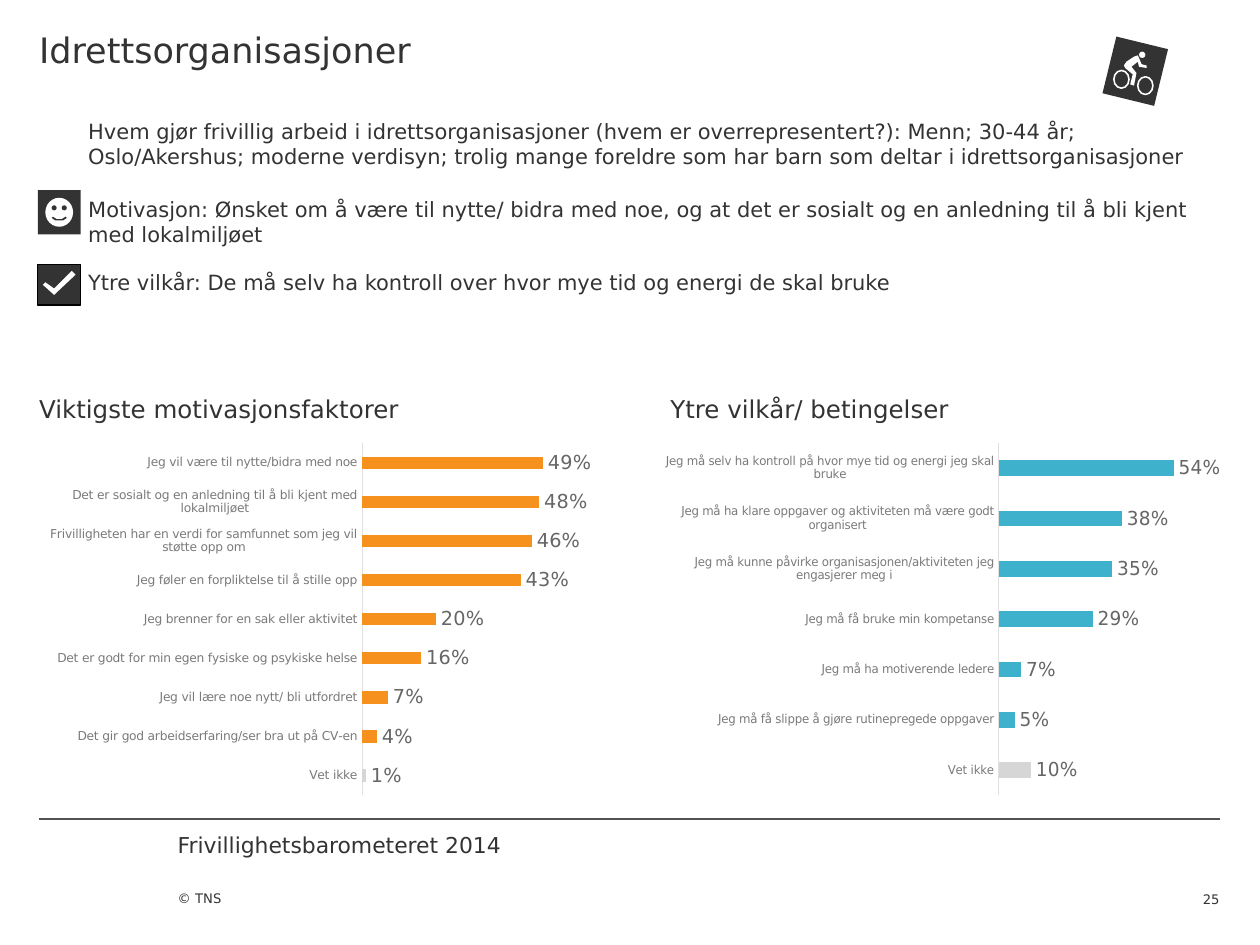
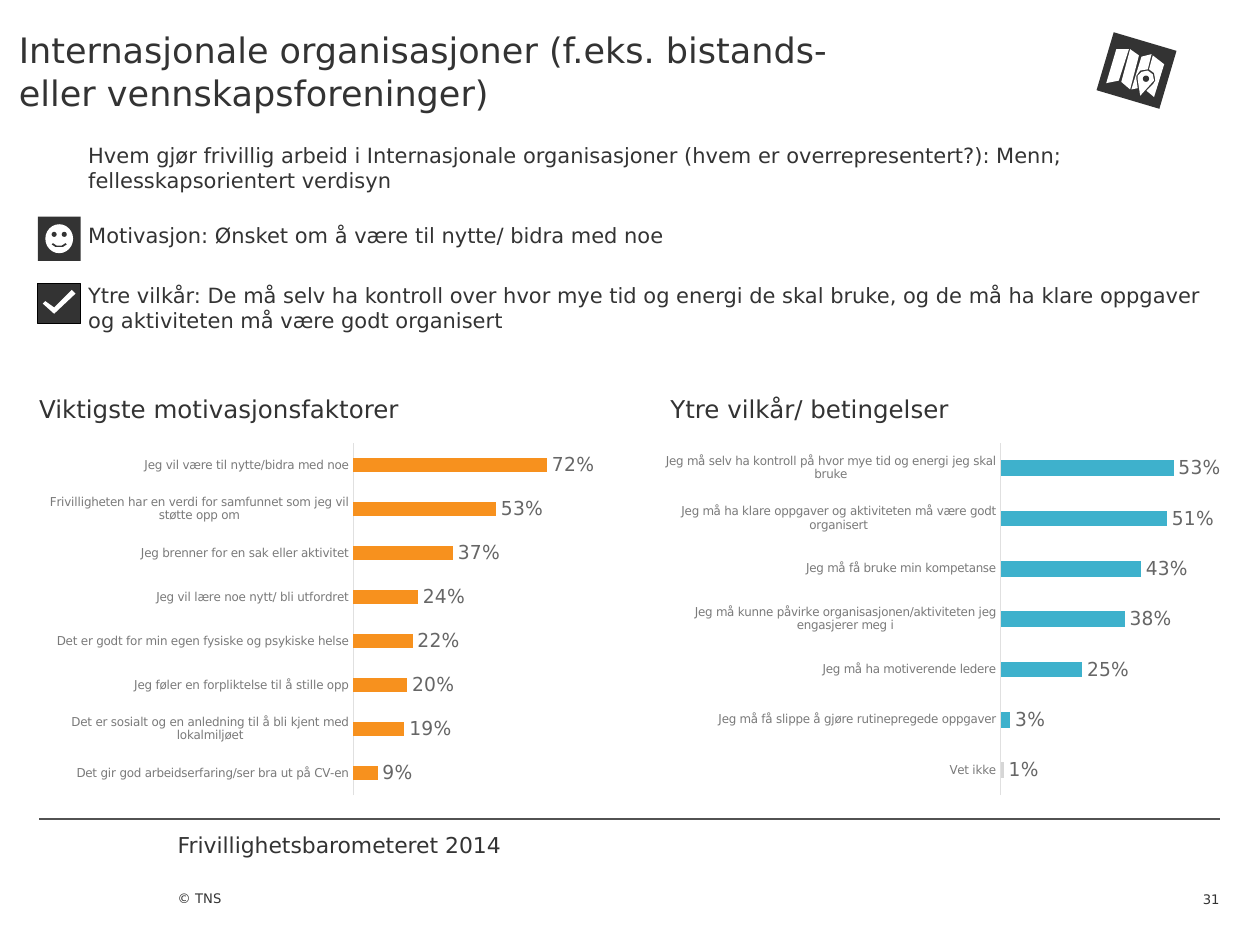
from lxml import etree
from pptx import Presentation
from pptx.chart.data import CategoryChartData
from pptx.dml.color import RGBColor
from pptx.enum.chart import XL_CHART_TYPE, XL_LABEL_POSITION, XL_TICK_MARK
from pptx.enum.shapes import MSO_CONNECTOR, MSO_SHAPE
from pptx.enum.text import MSO_ANCHOR, MSO_AUTO_SIZE, PP_ALIGN
from pptx.oxml.ns import qn
from pptx.util import Inches, Pt

BAR_CLUSTERED = XL_CHART_TYPE.BAR_CLUSTERED
OUTSIDE_END = XL_LABEL_POSITION.OUTSIDE_END
NO_TICK = XL_TICK_MARK.NONE
STRAIGHT = MSO_CONNECTOR.STRAIGHT
RECTANGLE, OVAL = MSO_SHAPE.RECTANGLE, MSO_SHAPE.OVAL
TOP, BOTTOM = MSO_ANCHOR.TOP, MSO_ANCHOR.BOTTOM
LEFT, RIGHT = PP_ALIGN.LEFT, PP_ALIGN.RIGHT
NO_AUTOFIT = MSO_AUTO_SIZE.NONE

FONT = "DejaVu Sans"
DARK, WHITE, BLACK = "333333", "FFFFFF", "000000"
RULE, AXIS = "525252", "E0E0E0"
CATEGORY_TEXT, VALUE_TEXT = "7A7A7A", "666666"
ORANGE, TURQUOISE, GREY = "F7911E", "3EB1CC", "D6D6D6"

DONT_KNOW = "Vet ikke"
USEFUL = "Jeg vil være til nytte/bidra med noe"
SOCIAL = "Det er sosialt og en anledning til å bli kjent med lokalmiljøet"
SOCIETY = "Frivilligheten har en verdi for samfunnet som jeg vil støtte opp om"
OBLIGATION = "Jeg føler en forpliktelse til å stille opp"
PASSION = "Jeg brenner for en sak eller aktivitet"
HEALTH = "Det er godt for min egen fysiske og psykiske helse"
LEARNING = "Jeg vil lære noe nytt/ bli utfordret"
CAREER = "Det gir god arbeidserfaring/ser bra ut på CV-en"
CONTROL = "Jeg må selv ha kontroll på hvor mye tid og energi jeg skal bruke"
CLEAR_TASKS = "Jeg må ha klare oppgaver og aktiviteten må være godt organisert"
INFLUENCE = "Jeg må kunne påvirke organisasjonen/aktiviteten jeg engasjerer meg i"
COMPETENCE = "Jeg må få bruke min kompetanse"
LEADERS = "Jeg må ha motiverende ledere"
NO_ROUTINE = "Jeg må få slippe å gjøre rutinepregede oppgaver"


def color(hex_string):
    return RGBColor.from_string(hex_string)


class Deck:
    def __init__(self):
        self.presentation = Presentation()
        self.presentation.slide_width = Inches(10)
        self.presentation.slide_height = Inches(7.5)
        self.slide = None

    def add_slide(self, title_lines, title_left, number):
        """Start a slide with its title, footer rule and footer texts."""
        layout = self.presentation.slide_layouts[5]
        self.slide = self.presentation.slides.add_slide(layout)
        title = self.slide.shapes.title
        title.left, title.top = Inches(title_left), Inches(0)
        title.width, title.height = Inches(9.68 - title_left), Inches(1.13)
        self.fill_frame(title.text_frame, title_lines, 20, top_inset=0.23)
        self.rule(0.31, 9.68, 6.5)
        self.text("Frivillighetsbarometeret 2014", 1.41, 6.6, 3.31, 0.42, 12.5)
        self.text("© TNS", 1.41, 6.92, 2.78, 0.58, 7.5,
                  anchor=BOTTOM, bottom_inset=0.31)
        self.text(number, 9.13, 6.92, 0.55, 0.28, 7.5, anchor=BOTTOM, align=RIGHT)

    def fill_frame(self, frame, lines, size, anchor=TOP, align=LEFT,
                   top_inset=0, bottom_inset=0):
        frame.word_wrap = True
        frame.auto_size = NO_AUTOFIT
        frame.vertical_anchor = anchor
        frame.margin_left = frame.margin_right = 0
        frame.margin_top = Inches(top_inset)
        frame.margin_bottom = Inches(bottom_inset)
        paragraph = frame.paragraphs[0]
        paragraph.alignment = align
        for index, line in enumerate(lines):
            if index:
                paragraph.add_line_break()
            run = paragraph.add_run()
            run.text = line
            self.style_font(run.font, size, DARK)

    def style_font(self, font, size, hex_string):
        font.name = FONT
        font.size = Pt(size)
        font.bold = False
        font.color.rgb = color(hex_string)

    def text(self, words, left, top, width, height, size, **options):
        box = self.slide.shapes.add_textbox(
            Inches(left), Inches(top), Inches(width), Inches(height))
        self.fill_frame(box.text_frame, [words], size, **options)

    def rule(self, left, right, top):
        line = self.slide.shapes.add_connector(
            STRAIGHT, Inches(left), Inches(top), Inches(right), Inches(top))
        line.line.color.rgb = color(RULE)
        line.line.width = Pt(0.75)
        etree.SubElement(line._element.spPr, qn("a:effectLst"))

    def paint(self, shape, fill, line=None, line_width=0.75):
        shape.shadow.inherit = False
        if fill:
            shape.fill.solid()
            shape.fill.fore_color.rgb = color(fill)
        else:
            shape.fill.background()
        if line:
            shape.line.color.rgb = color(line)
            shape.line.width = Pt(line_width)
        else:
            shape.line.fill.background()

    def preset(self, kind, left, top, width, height, fill,
               line=None, line_width=0.75, rotation=0):
        shape = self.slide.shapes.add_shape(
            kind, Inches(left), Inches(top), Inches(width), Inches(height))
        shape.rotation = rotation
        self.paint(shape, fill, line, line_width)

    def outline(self, contours, fill, top=0):
        """Draw closed contours given in hundredths of an inch, below top inches."""
        shifted = [[(x, y + top * 100) for x, y in contour] for contour in contours]
        builder = self.slide.shapes.build_freeform(*shifted[0][0], scale=Inches(0.01))
        for index, contour in enumerate(shifted):
            if index:
                builder.move_to(*contour[0])
            builder.add_line_segments(contour[1:], close=True)
        self.paint(builder.convert_to_shape(), fill)

    def smiley_icon(self, top):
        self.preset(RECTANGLE, 0.3, top, 0.34, 0.35, DARK)
        self.preset(OVAL, 0.36, top + 0.06, 0.22, 0.23, WHITE)
        for eye_left in (0.41, 0.49):
            self.preset(OVAL, eye_left, top + 0.12, 0.04, 0.04, DARK)
        mouth = [(41, 22), (42, 21), (45, 23), (49, 23), (52, 21),
                 (53, 22), (50, 24), (44, 24)]
        self.outline([mouth], DARK, top)

    def check_icon(self, top):
        self.preset(RECTANGLE, 0.3, top, 0.34, 0.32, DARK, BLACK)
        check = [(57, 5), (43, 19), (36, 14), (34, 16), (43, 24), (60, 8)]
        self.outline([check], WHITE, top)

    def bicycle_icon(self):
        self.outline([[(916, 84), (875, 74), (886, 29), (927, 39)]], DARK)
        for left, top in ((8.84, 0.56), (9.03, 0.61)):
            self.preset(OVAL, left, top, 0.12, 0.14, None, WHITE, 0.9)
        self.preset(OVAL, 9.04, 0.41, 0.05, 0.05, WHITE)
        rider = [(903, 49), (904, 53), (910, 54), (910, 52), (906, 51), (904, 46),
                 (903, 44), (900, 45), (894, 49), (892, 52), (893, 54), (899, 59),
                 (897, 67), (900, 68), (902, 58), (898, 53)]
        self.outline([rider], WHITE)

    def map_icon(self):
        self.preset(RECTANGLE, 8.76, 0.32, 0.52, 0.48, DARK, rotation=16.5)
        folds = [
            [(886, 39), (896, 39), (888, 64), (878, 66)],
            [(890, 65), (897, 71), (904, 44), (897, 39)],
            [(915, 44), (912, 55), (916, 58), (917, 64), (915, 67),
             (910, 72), (916, 77), (924, 51)],
            [(902, 60), (905, 56), (911, 55), (914, 43), (906, 45),
             (898, 71), (903, 70), (902, 63)],
        ]
        pin = [(914, 66), (905, 76), (903, 63), (903, 60), (906, 57),
               (911, 56), (915, 59), (916, 64)]
        self.outline(folds + [pin], WHITE)
        self.preset(OVAL, 9.07, 0.6, 0.05, 0.05, DARK)

    def findings(self, who, motivation, conditions, text_tops, icon_tops):
        smiley_top, check_top = icon_tops
        self.smiley_icon(smiley_top)
        self.check_icon(check_top)
        for words, top in zip((who, motivation, conditions), text_tops):
            self.text(words, 0.7, top, 8.95, 0.34, 12)

    def bar_chart(self, left, answers, maximum, bar_color):
        """Draw answers, listed from top to bottom as label and percent."""
        data = CategoryChartData(number_format="0%")
        upwards = answers[::-1]
        data.categories = [label for label, percent in upwards]
        data.add_series("Series 1", [percent / 100 for label, percent in upwards])
        chart = self.slide.shapes.add_chart(
            BAR_CLUSTERED, Inches(left), Inches(3.46),
            Inches(4.41), Inches(2.91), data).chart
        chart.has_legend = chart.has_title = False
        self.style_font(chart.font, 10, DARK)

        categories = chart.category_axis
        categories.major_tick_mark = categories.minor_tick_mark = NO_TICK
        categories.has_major_gridlines = False
        categories.format.line.color.rgb = color(AXIS)
        categories.format.line.width = Pt(0.75)
        self.style_font(categories.tick_labels.font, 7, CATEGORY_TEXT)

        values = chart.value_axis
        values.minimum_scale, values.maximum_scale = 0, maximum
        values.major_unit = 0.1
        values.has_major_gridlines = False
        values.visible = False

        plot = chart.plots[0]
        plot.gap_width = 219
        plot.vary_by_categories = False
        series = plot.series[0]
        series.invert_if_negative = False
        series.format.fill.solid()
        series.format.fill.fore_color.rgb = color(bar_color)
        if upwards[0][0] == DONT_KNOW:
            point_fill = series.points[0].format.fill
            point_fill.solid()
            point_fill.fore_color.rgb = color(GREY)
        labels = series.data_labels
        labels.show_value = True
        labels.position = OUTSIDE_END
        labels.number_format = "0%"
        labels.number_format_is_linked = False
        self.style_font(labels.font, 11, VALUE_TEXT)

    def chart_pair(self, motivations, motivation_maximum, conditions):
        self.text("Viktigste motivasjonsfaktorer", 0.31, 3.13, 4.41, 0.33, 14)
        self.text("Ytre vilkår/ betingelser", 5.32, 3.13, 4.41, 0.33, 14)
        self.bar_chart(0.31, motivations, motivation_maximum, ORANGE)
        self.bar_chart(5.28, conditions, 0.6, TURQUOISE)


def add_sports_slide(deck):
    deck.add_slide(["Idrettsorganisasjoner"], 0.31, "25")
    deck.chart_pair(
        [(USEFUL, 49), (SOCIAL, 48), (SOCIETY, 46), (OBLIGATION, 43), (PASSION, 20),
         (HEALTH, 16), (LEARNING, 7), (CAREER, 4), (DONT_KNOW, 1)],
        0.6,
        [(CONTROL, 54), (CLEAR_TASKS, 38), (INFLUENCE, 35), (COMPETENCE, 29),
         (LEADERS, 7), (NO_ROUTINE, 5), (DONT_KNOW, 10)])
    deck.bicycle_icon()
    deck.findings(
        "Hvem gjør frivillig arbeid i idrettsorganisasjoner (hvem er "
        "overrepresentert?): Menn; 30-44 år; Oslo/Akershus; moderne verdisyn; "
        "trolig mange foreldre som har barn som deltar i idrettsorganisasjoner",
        "Motivasjon: Ønsket om å være til nytte/ bidra med noe, og at det er "
        "sosialt og en anledning til å bli kjent med lokalmiljøet",
        "Ytre vilkår: De må selv ha kontroll over hvor mye tid og energi de skal bruke",
        text_tops=(0.94, 1.56, 2.14), icon_tops=(1.51, 2.1))


def add_international_slide(deck):
    deck.add_slide(["Internasjonale organisasjoner (f.eks. bistands-",
                    "eller vennskapsforeninger)"], 0.15, "31")
    deck.chart_pair(
        [(USEFUL, 72), (SOCIETY, 53), (PASSION, 37), (LEARNING, 24), (HEALTH, 22),
         (OBLIGATION, 20), (SOCIAL, 19), (CAREER, 9)],
        0.8,
        [(CONTROL, 53), (CLEAR_TASKS, 51), (COMPETENCE, 43), (INFLUENCE, 38),
         (LEADERS, 25), (NO_ROUTINE, 3), (DONT_KNOW, 1)])
    deck.map_icon()
    deck.findings(
        "Hvem gjør frivillig arbeid i Internasjonale organisasjoner (hvem er "
        "overrepresentert?): Menn; fellesskapsorientert verdisyn",
        "Motivasjon: Ønsket om å være til nytte/ bidra med noe",
        "Ytre vilkår: De må selv ha kontroll over hvor mye tid og energi de skal "
        "bruke, og de må ha klare oppgaver og aktiviteten må være godt organisert",
        text_tops=(1.13, 1.77, 2.24), icon_tops=(1.72, 2.25))


def main():
    deck = Deck()
    add_sports_slide(deck)
    add_international_slide(deck)
    deck.presentation.save("out.pptx")


if __name__ == "__main__":
    main()
